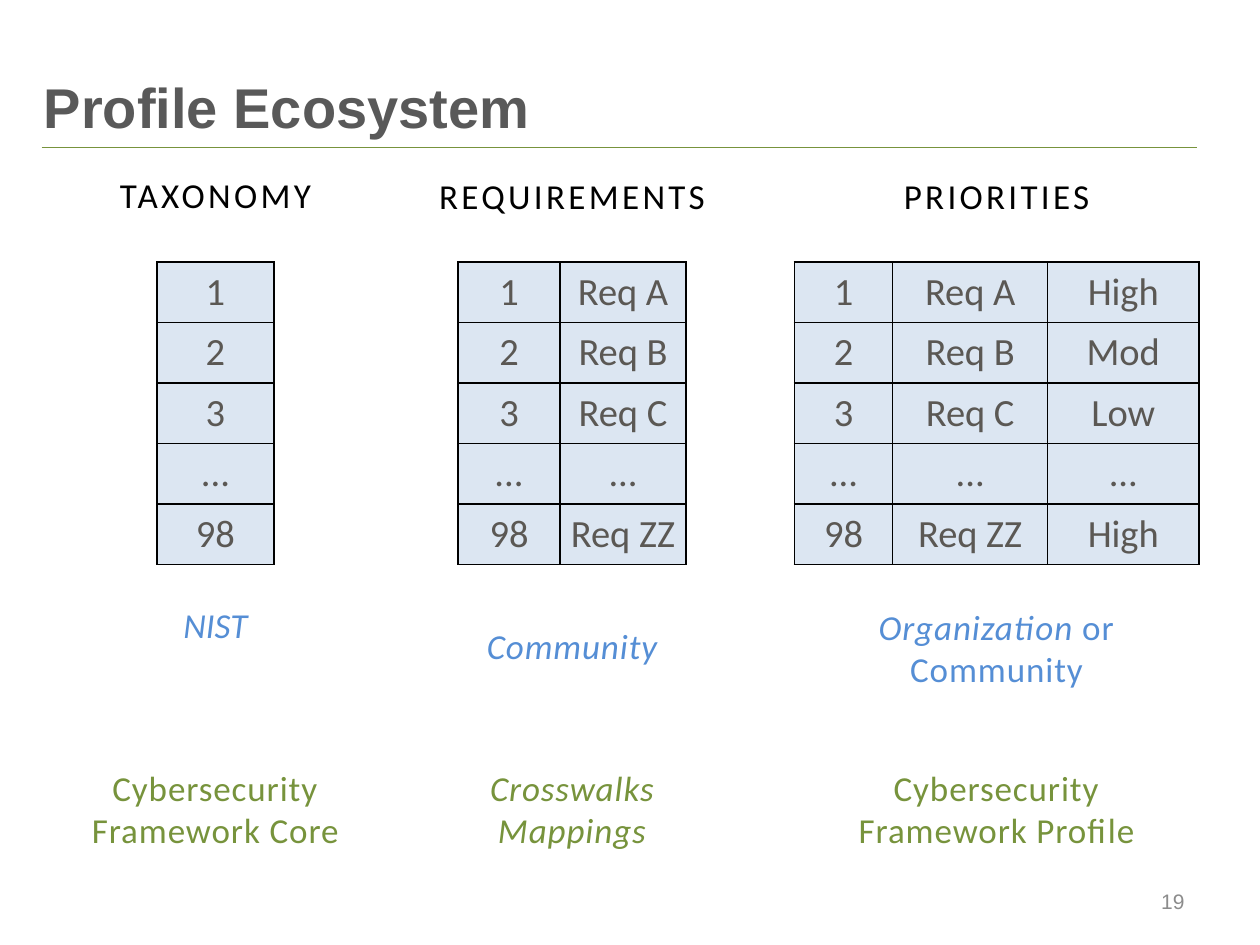
from lxml.etree import SubElement
from pptx import Presentation
from pptx.dml.color import RGBColor
from pptx.enum.shapes import MSO_CONNECTOR
from pptx.enum.text import MSO_ANCHOR, PP_ALIGN
from pptx.oxml.ns import qn
from pptx.util import Inches, Pt

BLACK, BLUE, GREEN = "000000", "558ED5", "77933C"
CELL_TEXT, CELL_FILL = "5B5854", "DCE6F2"
ROW_HEIGHT = 0.48
TABLE_TOP = 2.08
REQUIREMENTS = ["Req A", "Req B", "Req C", "...", "Req ZZ"]
NUMBERS = ["1", "2", "3", "...", "98"]
PRIORITIES = ["High", "Mod", "Low", "...", "High"]


def color(value):
    return RGBColor.from_string(value)


def add_run(paragraph, text, size, text_color, font="Calibri", bold=False, italic=False, spacing=0):
    run = paragraph.add_run()
    run.text = text
    run.font.size = Pt(size)
    run.font.name = font
    run.font.bold = bold
    run.font.italic = italic
    run.font.color.rgb = color(text_color)
    if spacing:
        run.font._element.set("spc", str(round(spacing * 100)))


def add_text_frame(slide, box, anchor, inset=None):
    frame = slide.shapes.add_textbox(*map(Inches, box)).text_frame
    frame.word_wrap = True
    frame.vertical_anchor = anchor
    if inset is not None:
        frame.margin_left = frame.margin_right = Inches(inset)
        frame.margin_top = frame.margin_bottom = Inches(inset)
    return frame


def add_title(slide, box):
    paragraph = add_text_frame(slide, box, MSO_ANCHOR.BOTTOM).paragraphs[0]
    paragraph.line_spacing = Pt(26)
    add_run(paragraph, "Profile Ecosystem", 32, "595959", "Arial", bold=True)
    rule = slide.shapes.add_connector(
        MSO_CONNECTOR.STRAIGHT, Inches(0.33), Inches(1.17), Inches(9.5), Inches(1.17))
    rule.line.color.rgb = color(GREEN)
    rule.line.width = Pt(0.75)
    SubElement(rule._element.spPr, qn("a:effectLst"))


def add_page_number(slide, box):
    paragraph = add_text_frame(slide, box, MSO_ANCHOR.MIDDLE).paragraphs[0]
    paragraph.alignment = PP_ALIGN.RIGHT
    add_run(paragraph, "19", 12, "8C8C8C", "Arial")


def add_label(slide, center, top, width, height, lines, text_color, spacing,
              anchor=MSO_ANCHOR.MIDDLE, inset=0.06):
    frame = add_text_frame(slide, (center - width / 2, top, width, height), anchor, inset)
    for index, runs in enumerate(lines):
        paragraph = frame.add_paragraph() if index else frame.paragraphs[0]
        paragraph.alignment = PP_ALIGN.CENTER
        for text, italic in runs:
            add_run(paragraph, text, 20, text_color, italic=italic, spacing=spacing)


def add_borders(cell):
    properties = cell._tc.get_or_add_tcPr()
    for index, side in enumerate(("lnL", "lnR", "lnT", "lnB")):
        line = properties.makeelement(qn(f"a:{side}"), {"w": str(Pt(1))})
        fill = SubElement(line, qn("a:solidFill"))
        SubElement(fill, qn("a:srgbClr"), val=BLACK)
        properties.insert(index, line)


def add_grid(slide, center, widths, columns):
    total = sum(widths)
    table = slide.shapes.add_table(
        len(NUMBERS), len(widths), Inches(center - total / 2), Inches(TABLE_TOP),
        Inches(total), Inches(ROW_HEIGHT * len(NUMBERS))).table
    table.first_row = table.horz_banding = False
    for row in table.rows:
        row.height = Inches(ROW_HEIGHT)
    for column_index, (width, values) in enumerate(zip(widths, columns)):
        table.columns[column_index].width = Inches(width)
        for row_index, value in enumerate(values):
            cell = table.cell(row_index, column_index)
            cell.fill.solid()
            cell.fill.fore_color.rgb = color(CELL_FILL)
            cell.vertical_anchor = MSO_ANCHOR.MIDDLE
            cell.margin_left = cell.margin_right = Inches(0.06)
            cell.margin_top = cell.margin_bottom = Inches(0.05)
            paragraph = cell.text_frame.paragraphs[0]
            paragraph.alignment = PP_ALIGN.CENTER
            add_run(paragraph, value, 22, CELL_TEXT)
            add_borders(cell)


def add_taxonomy(slide, center):
    add_label(slide, center, 1.33, 2.19, 0.55, [[("TAXONOMY", False)]], BLACK, 1.9,
              MSO_ANCHOR.TOP, 0.05)
    add_grid(slide, center, [0.93], [NUMBERS])
    add_label(slide, center, 4.74, 2.67, 0.88, [[("NIST", True)]], BLUE, 0,
              MSO_ANCHOR.TOP, 0.05)
    add_label(slide, center, 6.02, 2.44, 0.79,
              [[("Cybersecurity Framework Core", False)]], GREEN, 0.5)


def add_requirements(slide, center):
    add_label(slide, center, 1.33, 2.48, 0.45, [[("REQUIREMENTS", False)]], BLACK, 1.9,
              MSO_ANCHOR.BOTTOM)
    add_grid(slide, center, [0.81, 1], [NUMBERS, REQUIREMENTS])
    add_label(slide, center, 4.9, 2.5, 0.45, [[("Community", True)]], BLUE, 0.5)
    add_label(slide, center, 6.02, 2.26, 0.79,
              [[("Crosswalks", True)], [("Mappings", True)]], GREEN, 0.5)


def add_priorities(slide, center):
    add_label(slide, center, 1.33, 2.49, 0.45, [[("PRIORITIES", False)]], BLACK, 1.9,
              MSO_ANCHOR.BOTTOM)
    add_grid(slide, center, [0.78, 1.23, 1.2], [NUMBERS, REQUIREMENTS, PRIORITIES])
    add_label(slide, center, 4.74, 2.22, 0.79,
              [[("Organization", True), (" or Community", False)]], BLUE, 0.5)
    add_label(slide, center, 6.02, 2.99, 0.79,
              [[("Cybersecurity Framework Profile", False)]], GREEN, 0.5)


def main():
    presentation = Presentation()
    presentation.slide_width = Inches(10)
    presentation.slide_height = Inches(7.5)
    slide = presentation.slides.add_slide(presentation.slide_layouts[6])
    add_title(slide, (0.25, 0.33, 9.62, 0.83))
    add_taxonomy(slide, 1.71)
    add_requirements(slide, 4.54)
    add_priorities(slide, 7.91)
    add_page_number(slide, (7.17, 6.95, 2.33, 0.4))
    presentation.save("out.pptx")


if __name__ == "__main__":
    main()
